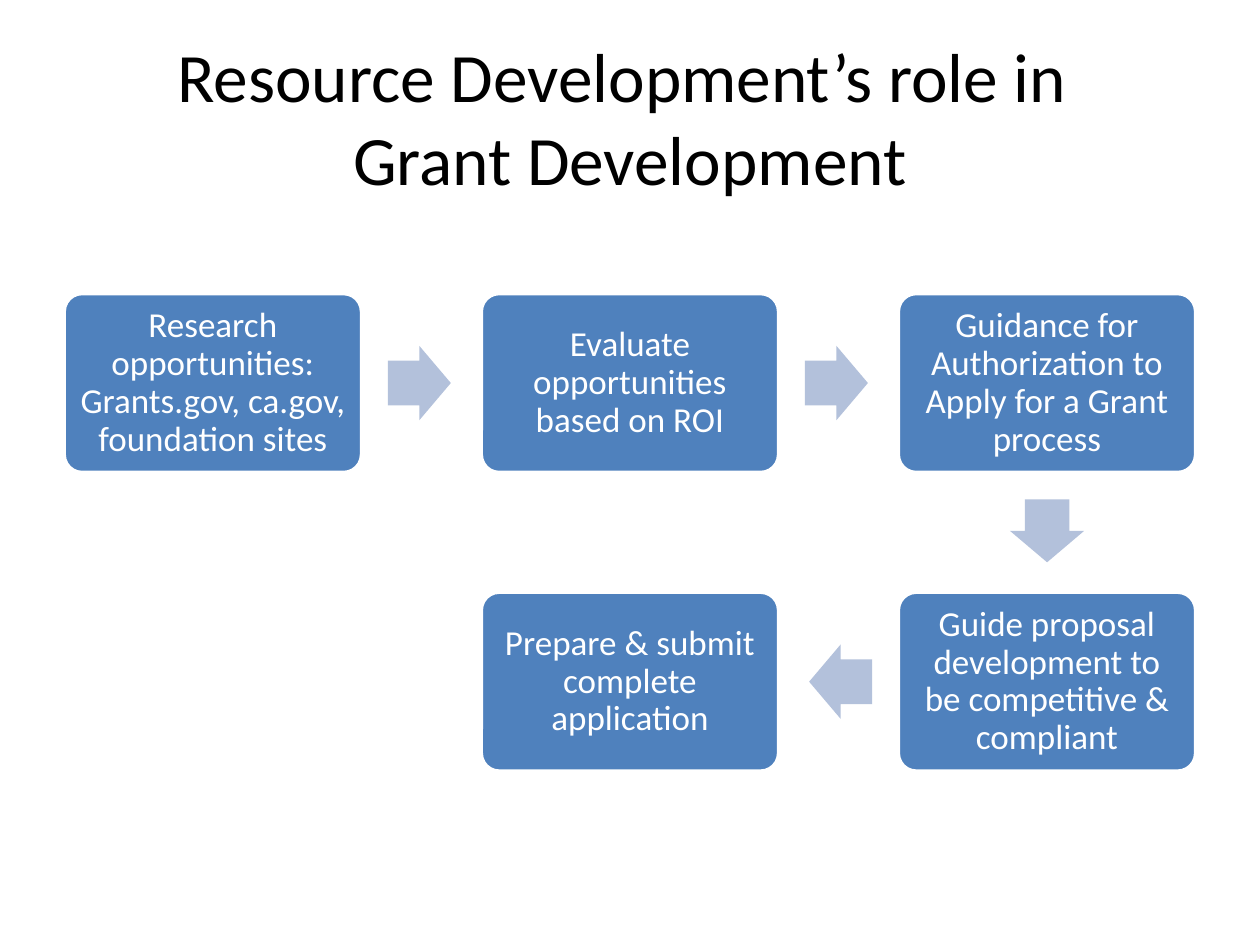
import math
from itertools import pairwise
from pptx import Presentation, util as u
from pptx.dml.color import RGBColor
from pptx.enum import shapes, text

INK = {"text": "000000", "box": "4F81BD", "arrow": "B3C1DB", "white": "FFFFFF"}
STEPS = [
    (0, 0, "Research opportunities: Grants.gov, ca.gov, foundation sites"),
    (1, 0, "Evaluate opportunities based on ROI"),
    (2, 0, "Guidance for Authorization to Apply for a Grant process"),
    (2, 1, "Guide proposal development to be competitive & compliant"),
    (1, 1, "Prepare & submit complete application"),
]


class Deck:
    font = "Calibri"
    left, top = 1.69, 3.04
    col, row = 3.31, 2.37
    box_size = 2.36, 1.42
    arrow_size = 0.5, 0.59
    reach = 0.495

    def __init__(self):
        self.file = Presentation()
        self.file.slide_width, self.file.slide_height = u.Inches(10), u.Inches(7.5)
        self.slide = self.file.slides.add_slide(self.file.slide_layouts[5])

    def label(self, frame, words, size, color):
        frame.text = words
        frame.word_wrap = True
        frame.vertical_anchor = text.MSO_ANCHOR.MIDDLE
        for para in frame.paragraphs:
            para.alignment = text.PP_ALIGN.CENTER
            para.font.name = self.font
            para.font.size = u.Pt(size)
            para.font.color.rgb = RGBColor.from_string(INK[color])

    def title(self, words):
        head = self.slide.shapes.title
        head.left, head.top = u.Inches(0.5), u.Inches(0.3)
        head.width, head.height = u.Inches(9), u.Inches(1.25)
        self.label(head.text_frame, words, 39.6, "text")
        head.text_frame.auto_size = text.MSO_AUTO_SIZE.NONE

    def shape(self, kind, col, row, size, color):
        wide, high = size
        x = self.left + col * self.col - wide / 2
        y = self.top + row * self.row - high / 2
        item = self.slide.shapes.add_shape(kind, *map(u.Inches, (x, y, wide, high)))
        item.shadow.inherit = False
        item.fill.solid()
        item.fill.fore_color.rgb = RGBColor.from_string(INK[color])
        return item

    def box(self, col, row, words):
        item = self.shape(shapes.MSO_SHAPE.ROUNDED_RECTANGLE, col, row, self.box_size, "box")
        item.adjustments[0] = 0.1
        item.line.color.rgb = RGBColor.from_string(INK["white"])
        item.line.width = u.Pt(2)
        frame = item.text_frame
        self.label(frame, words, 20, "white")
        frame.paragraphs[0].line_spacing = 0.9
        frame.margin_left = frame.margin_right = u.Inches(0.08)
        frame.margin_top = frame.margin_bottom = u.Inches(0.08)

    def arrow(self, start, end):
        across, down = end[0] - start[0], end[1] - start[1]
        item = self.shape(
            shapes.MSO_SHAPE.RIGHT_ARROW,
            start[0] + across * self.reach,
            start[1] + down * self.reach,
            self.arrow_size,
            "arrow",
        )
        item.adjustments[0], item.adjustments[1] = 0.6, 0.5
        item.line.fill.background()
        item.rotation = math.degrees(math.atan2(down, across))


def main():
    deck = Deck()
    deck.title("Resource Development’s role in \vGrant Development")
    for step in STEPS:
        deck.box(*step)
    for start, end in pairwise(STEPS):
        deck.arrow(start[:2], end[:2])
    deck.file.save("out.pptx")


if __name__ == "__main__":
    main()
